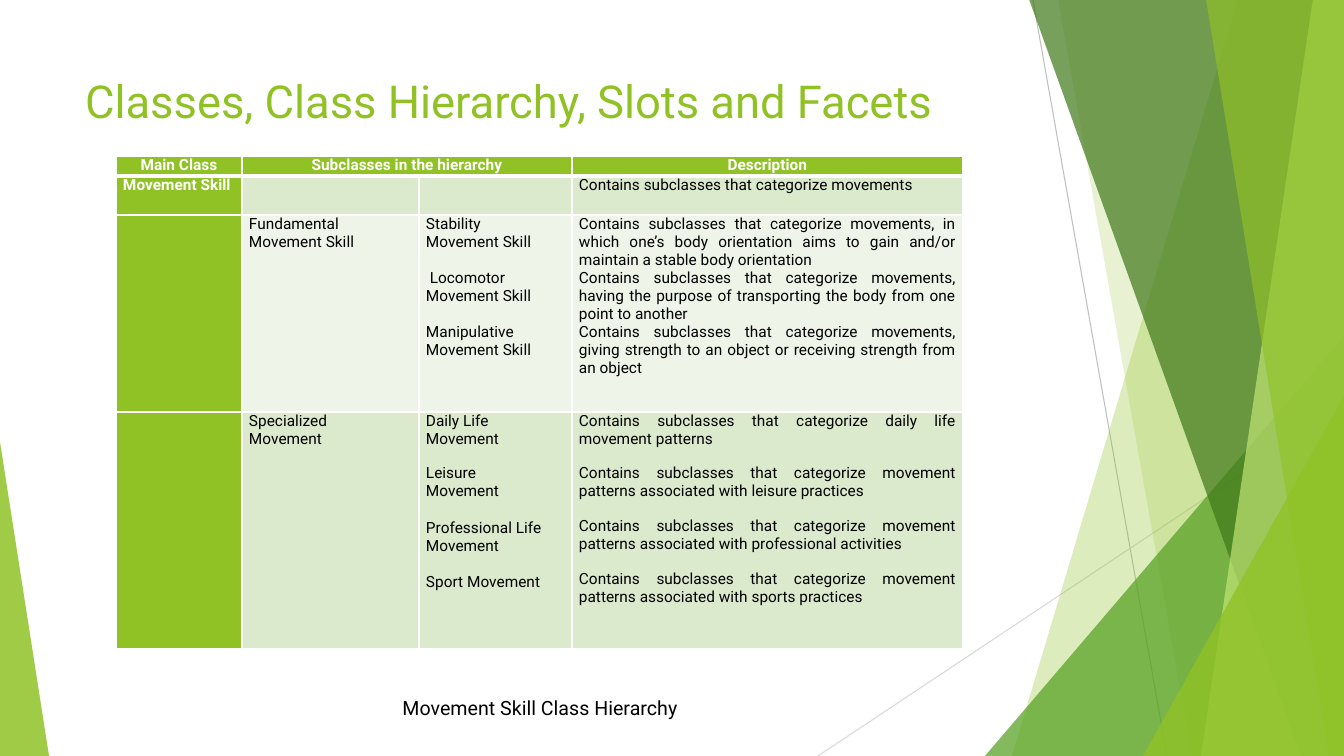
from lxml import etree
from pptx import Presentation
from pptx.dml.color import RGBColor
from pptx.enum.shapes import MSO_CONNECTOR, MSO_SHAPE
from pptx.enum.text import MSO_ANCHOR, MSO_AUTO_SIZE, PP_ALIGN
from pptx.oxml.ns import qn
from pptx.util import Pt

TRIANGLE = MSO_SHAPE.ISOSCELES_TRIANGLE
STRAIGHT = MSO_CONNECTOR.STRAIGHT
LEFT, CENTER, JUSTIFY = PP_ALIGN.LEFT, PP_ALIGN.CENTER, PP_ALIGN.JUSTIFY
FONT = "Roboto"
PX = 914400 / 100.8
COLORS = {
    "lime": "90C226", "green": "54A021", "forest": "3F7819", "pale": "C0E474",
    "gray": "BFBFBF", "light gray": "D9D9D9", "white": "FFFFFF", "black": "000000",
    "band dark": "DBE9CD", "band light": "EEF4E8",
}


def px(*lengths):
    return [round(length * PX) for length in lengths]


def add_run(paragraph, text, size, color, bold=False):
    run = paragraph.add_run()
    run.text = text
    run.font.name, run.font.size, run.font.bold = FONT, Pt(size), bold
    run.font.color.rgb = RGBColor.from_string(COLORS[color])


prs = Presentation()
prs.slide_width, prs.slide_height = px(1344, 756)
slide = prs.slides.add_slide(prs.slide_layouts[5])
shapes = slide.shapes
title = shapes.title

# Decorative facets, back to front
for ends, color in [((1033, 0, 1167, 756), "gray"), ((1344, 406, 818, 756), "light gray")]:
    ray = shapes.add_connector(STRAIGHT, *px(*ends))
    ray.line.width = Pt(0.75)
    ray.line.color.rgb = RGBColor.from_string(COLORS[color])
    etree.SubElement(ray._element.spPr, qn("a:effectLst"))

# A facet is either a band (top left x, bottom left x) reaching the right edge,
# or a triangle (left, top, width, height, apex position)
FACETS = [
    ((1238, 1012), "lime", 30),
    ((1058, 1192), "lime", 20),
    ((985, 336, 359, 420, 1), "green", 72),
    ((1029, 1301), "forest", 70),
    ((1313, 1201), "pale", 70),
    ((1206, 1329), "lime", 65),
    ((1143, 396, 201, 360, 1), "lime", 80),
    ((0, 442, 49, 314, 0), "lime", 85),
]
for geometry, color, opacity in FACETS:
    if len(geometry) == 2:
        top_x, bottom_x = geometry
        outline = shapes.build_freeform(top_x, -1, scale=PX)
        outline.add_line_segments([(1344, -1), (1344, 756), (bottom_x, 756)], close=True)
        facet = outline.convert_to_shape()
    else:
        facet = shapes.add_shape(TRIANGLE, *px(*geometry[:4]))
        facet.adjustments[0] = geometry[4]
    facet.shadow.inherit = False
    facet.line.fill.background()
    facet.fill.solid()
    facet.fill.fore_color.rgb = RGBColor.from_string(COLORS[color])
    tint = facet._element.spPr.find(".//" + qn("a:srgbClr"))
    etree.SubElement(tint, qn("a:alpha"), val=str(opacity * 1000))

# Title, in front of the facets
shapes.element.append(title._element)
title.left, title.top, title.width, title.height = px(75, 68, 948, 145)
title_frame = title.text_frame
title_frame.word_wrap = True
title_frame.auto_size = MSO_AUTO_SIZE.NONE
title_frame.vertical_anchor = MSO_ANCHOR.TOP
title_frame.paragraphs[0].alignment = LEFT
add_run(title_frame.paragraphs[0], "Classes, Class Hierarchy, Slots and Facets", 32.4, "lime")

# Class table: a cell lists (text, space before in points)
COLUMN_WIDTHS = [126, 177, 153, 391]
ROW_HEIGHTS = [20, 39, 197, 237]
ROW_FILLS = ["lime", "band dark", "band light", "band dark"]
CELL_TEXTS = {
    (0, 0): [("Main Class", 0)],
    (0, 1): [("Subclasses in the hierarchy", 0)],
    (0, 3): [("Description", 0)],
    (1, 0): [("Movement Skill", 0)],
    (1, 3): [("Contains subclasses that categorize movements", 0)],
    (2, 1): [("Fundamental Movement Skill", 0)],
    (2, 2): [
        ("Stability", 0), ("Movement Skill", 0),
        (" Locomotor", 13), ("Movement Skill", 0),
        ("Manipulative Movement Skill", 13),
    ],
    (2, 3): [
        ("Contains subclasses that categorize movements, in which one’s body orientation "
         "aims to gain and/or maintain a stable body orientation", 0),
        ("Contains subclasses that categorize movements, having the purpose of "
         "transporting the body from one point to another", 0),
        ("Contains subclasses that categorize movements, giving strength to an object "
         "or receiving strength from an object", 0),
    ],
    (3, 1): [("Specialized", 0), ("Movement", 0)],
    (3, 2): [
        ("Daily Life Movement", 0),
        ("Leisure", 12), ("Movement", 0),
        ("Professional Life Movement", 13),
        ("Sport Movement", 13),
    ],
    (3, 3): [
        ("Contains subclasses that categorize daily life movement patterns", 0),
        ("Contains subclasses that categorize movement patterns associated with "
         "leisure practices", 12),
        ("Contains subclasses that categorize movement patterns associated with "
         "professional activities", 12),
        ("Contains subclasses that categorize movement patterns associated with "
         "sports practices", 12),
    ],
}
LEFT_ALIGNED = [(2, 1), (3, 1), (3, 2)]

table = shapes.add_table(
    4, 4, *px(116, 156, sum(COLUMN_WIDTHS), sum(ROW_HEIGHTS))).table
for column, width in zip(table.columns, COLUMN_WIDTHS):
    column.width = px(width)[0]
for row, height in zip(table.rows, ROW_HEIGHTS):
    row.height = px(height)[0]
table.cell(0, 1).merge(table.cell(0, 2))

for r, row_fill in enumerate(ROW_FILLS):
    for c in range(len(COLUMN_WIDTHS)):
        cell = table.cell(r, c)
        heading = r == 0 or c == 0
        cell.margin_left = cell.margin_right = px(7)[0]
        cell.margin_top = cell.margin_bottom = 0
        cell.fill.solid()
        cell.fill.fore_color.rgb = RGBColor.from_string(COLORS["lime" if heading else row_fill])

        borders = {"a:lnL": 1, "a:lnR": 1, "a:lnT": 3 if r == 1 else 1, "a:lnB": 3 if r == 0 else 1}
        for position, (side, points) in enumerate(borders.items()):
            border = etree.Element(qn(side), w=str(Pt(points)))
            stroke = etree.SubElement(border, qn("a:solidFill"))
            etree.SubElement(stroke, qn("a:srgbClr"), val=COLORS["white"])
            cell._tc.tcPr.insert(position, border)

        frame = cell.text_frame
        for i, (text, space_before) in enumerate(CELL_TEXTS.get((r, c), [])):
            paragraph = frame.add_paragraph() if i else frame.paragraphs[0]
            paragraph.space_before = Pt(space_before)
            paragraph.alignment = CENTER if r == 0 else LEFT if (r, c) in LEFT_ALIGNED else JUSTIFY
            add_run(paragraph, text, 11, "white" if heading else "black", heading)

# Caption
caption = shapes.add_textbox(*px(205, 691, 670, 34)).text_frame
caption.word_wrap = True
caption.paragraphs[0].alignment = CENTER
add_run(caption.paragraphs[0], "Movement Skill Class Hierarchy", 14, "black")

prs.save("out.pptx")
